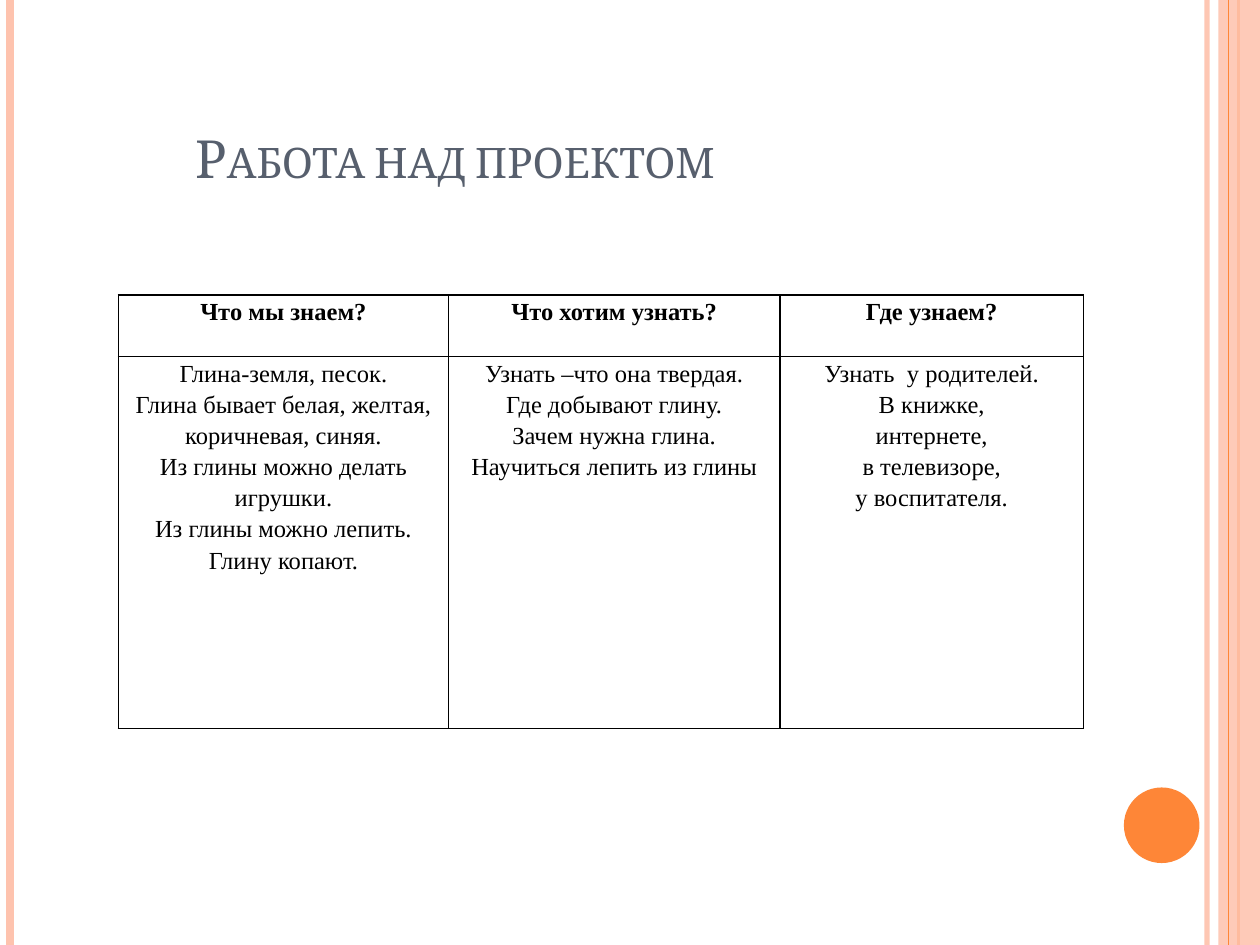
from lxml import etree
from pptx import Presentation
from pptx import util as u
from pptx.dml.color import RGBColor
from pptx.enum import shapes, text
from pptx.oxml import ns

# Content
TITLE = "Работа над проектом"
COLUMNS = [
    ("Что мы знаем?", [
        "Глина-земля, песок.",
        "Глина бывает белая, желтая, коричневая, синяя.",
        "Из глины можно делать игрушки.",
        "Из глины можно лепить.",
        "Глину копают."]),
    ("Что хотим узнать?", [
        "Узнать –что она твердая.",
        "Где добывают глину.",
        "Зачем нужна глина.",
        "Научиться лепить из глины"]),
    ("Где узнаем?", [
        "Узнать  у родителей.",
        "В книжке,",
        "интернете,",
        "в телевизоре,",
        "у воспитателя."]),
]
COLUMN_WIDTHS = [2.62, 2.63, 2.41]
ROW_HEIGHTS = [0.49, 2.95]

# Colours and page frame
ORANGE, PEACH, SLATE, BLACK = "FE8637", "FEC3AE", "575F6D", "000000"
PAGE_WIDTH, PAGE_HEIGHT = 10, 7.5
BACK_STRIPES = [(9.58, PEACH, 3, 93), (0.08, PEACH, 4.5, 100), (9.83, ORANGE, 1.5, 100)]
FRONT_STRIPES = [(9.75, ORANGE, 0.75, 100)]


def color(value):
    return RGBColor.from_string(value)


def apply(target, values):
    for name, value in values.items():
        setattr(target, name, value)


def add_child(parent, tag, **attributes):
    return etree.SubElement(parent, ns.qn(tag), attributes)


def set_opacity(element, percent):
    tone = next(element.iter(ns.qn("a:srgbClr")))
    add_child(tone, "a:alpha", val=str(percent * 1000))


def add_stripe(page, x, tone, width, opacity):
    stripe = page.shapes.add_connector(
        shapes.MSO_CONNECTOR.STRAIGHT, u.Inches(x), 0, u.Inches(x), u.Inches(PAGE_HEIGHT))
    stripe.line.color.rgb = color(tone)
    stripe.line.width = u.Pt(width)
    properties = stripe._element.spPr
    if opacity < 100:
        set_opacity(properties, opacity)
    add_child(properties, "a:effectLst")


def add_plain_shape(page, kind, place, tone):
    shape = page.shapes.add_shape(kind, *map(u.Inches, place))
    shape.fill.solid()
    shape.fill.fore_color.rgb = color(tone)
    shape.line.fill.background()
    shape.shadow.inherit = False
    return shape


def set_borders(cell):
    properties = cell._tc.get_or_add_tcPr()
    for position, side in enumerate(("a:lnL", "a:lnR", "a:lnT", "a:lnB")):
        border = etree.Element(ns.qn(side), w=str(u.Pt(1)))
        fill = add_child(border, "a:solidFill")
        add_child(fill, "a:srgbClr", val=BLACK)
        properties.insert(position, border)


def fill_cell(cell, lines, bold):
    cell.fill.background()
    set_borders(cell)
    apply(cell, {"margin_left": u.Inches(0.05), "margin_right": u.Inches(0.05),
                 "margin_top": 0, "margin_bottom": 0})
    for index, line in enumerate(lines):
        frame = cell.text_frame
        para = frame.add_paragraph() if index else frame.paragraphs[0]
        apply(para, {"alignment": text.PP_ALIGN.CENTER, "line_spacing": 1.15})
        span = para.add_run()
        span.text = line
        apply(span.font, {"name": "Times New Roman", "size": u.Pt(14), "bold": bold})
        span.font.color.rgb = color(BLACK)


def add_title(page):
    box = page.shapes.title
    apply(box, dict(zip(("left", "top", "width", "height"),
                        map(u.Inches, (0.5, 0.3, 8.17, 1.25)))))
    apply(box.text_frame, {"vertical_anchor": text.MSO_ANCHOR.BOTTOM, "word_wrap": True,
                           "auto_size": text.MSO_AUTO_SIZE.NONE})
    para = box.text_frame.paragraphs[0]
    para.alignment = text.PP_ALIGN.LEFT
    para._p.get_or_add_pPr().set("marL", str(u.Inches(0.95)))
    span = para.add_run()
    span.text = TITLE
    apply(span.font, {"name": "Cambria", "size": u.Pt(30), "bold": False})
    span.font.color.rgb = color(SLATE)
    span.font._element.set("cap", "small")


def add_plan_table(page):
    place = (0.94, 2.34, sum(COLUMN_WIDTHS), sum(ROW_HEIGHTS))
    table = page.shapes.add_table(2, len(COLUMNS), *map(u.Inches, place)).table
    apply(table, {"first_row": False, "horz_banding": False})
    for row, height in zip(table.rows, ROW_HEIGHTS):
        row.height = u.Inches(height)
    for index, (heading, lines) in enumerate(COLUMNS):
        table.columns[index].width = u.Inches(COLUMN_WIDTHS[index])
        fill_cell(table.cell(0, index), [heading], True)
        fill_cell(table.cell(1, index), lines, False)


def main():
    deck = Presentation()
    deck.slide_width, deck.slide_height = u.Inches(PAGE_WIDTH), u.Inches(PAGE_HEIGHT)
    page = deck.slides.add_slide(deck.slide_layouts.get_by_name("Title Only"))

    # Side decoration
    for stripe in BACK_STRIPES:
        add_stripe(page, *stripe)
    band = add_plain_shape(page, shapes.MSO_SHAPE.RECTANGLE,
                           (9.67, 0, 0.33, PAGE_HEIGHT), PEACH)
    set_opacity(band._element.spPr, 87)
    for stripe in FRONT_STRIPES:
        add_stripe(page, *stripe)
    add_plain_shape(page, shapes.MSO_SHAPE.OVAL, (8.92, 6.25, 0.6, 0.6), ORANGE)

    # Title and table
    add_title(page)
    add_plan_table(page)
    deck.save("out.pptx")


if __name__ == "__main__":
    main()
